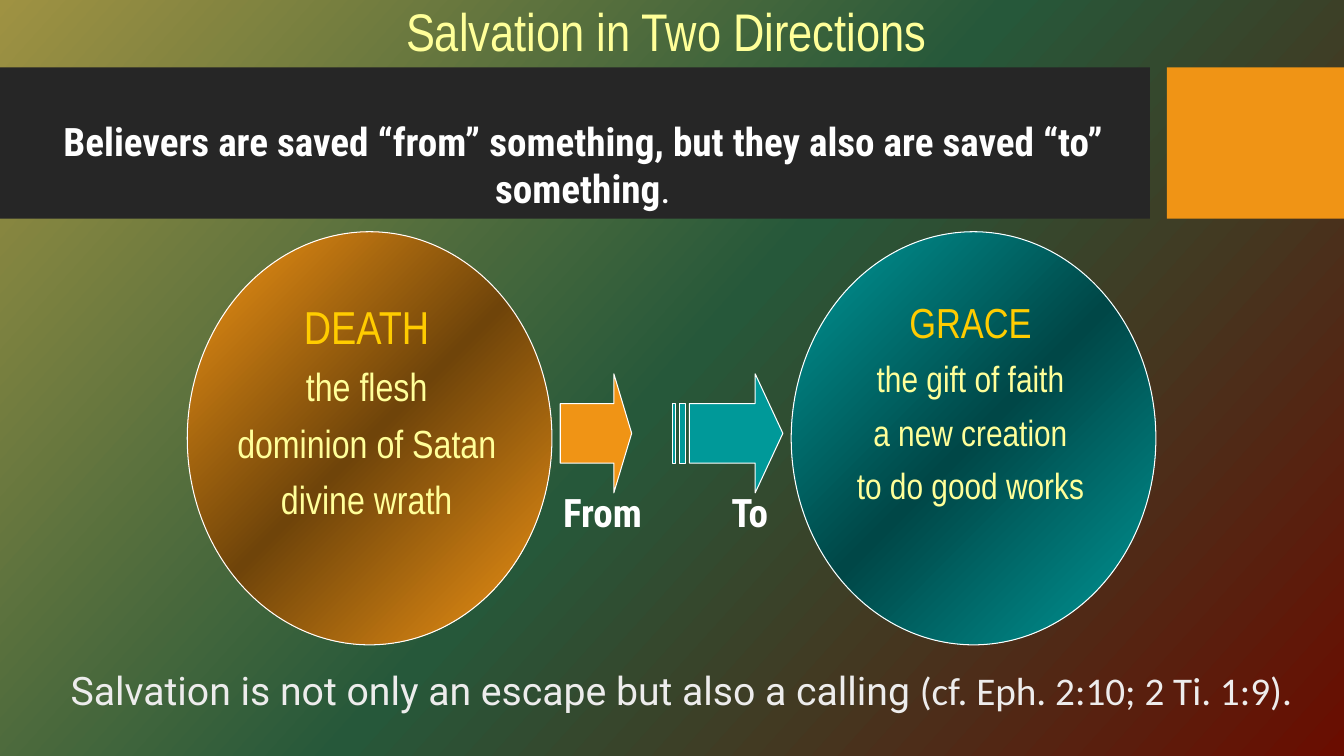
from copy import deepcopy

from pptx import Presentation
from pptx.dml.color import RGBColor
from pptx.enum.shapes import MSO_SHAPE
from pptx.enum.text import MSO_ANCHOR, PP_ALIGN
from pptx.oxml import parse_xml
from pptx.oxml.ns import nsdecls, qn
from pptx.util import Cm, Pt

RECTANGLE, ELLIPSE = MSO_SHAPE.RECTANGLE, MSO_SHAPE.OVAL
ARROW, STRIPED_ARROW = MSO_SHAPE.RIGHT_ARROW, MSO_SHAPE.STRIPED_RIGHT_ARROW
LEFT, CENTER = PP_ALIGN.LEFT, PP_ALIGN.CENTER
MIDDLE = MSO_ANCHOR.MIDDLE

OLIVE = RGBColor(0x9F, 0x92, 0x42)
GREEN = RGBColor(0x26, 0x58, 0x3A)
MAROON = RGBColor(0x6A, 0x0D, 0x00)
CHARCOAL = RGBColor(0x26, 0x26, 0x26)
ORANGE = RGBColor(0xF0, 0x94, 0x15)
BROWN = RGBColor(0x6F, 0x44, 0x0A)
TEAL = RGBColor(0x00, 0x99, 0x99)
DARK_TEAL = RGBColor(0x00, 0x47, 0x47)
WHITE = RGBColor(0xFF, 0xFF, 0xFF)
PALE_GRAY = RGBColor(0xED, 0xEC, 0xEC)
PALE_YELLOW = RGBColor(0xFF, 0xFF, 0x99)
GOLD = RGBColor(0xFF, 0xCC, 0x00)


def set_gradient(fill, element, angle, colors):
    fill.gradient()
    fill.gradient_angle = 360 - angle
    stop_list = element.find(".//" + qn("a:gsLst"))
    stop_list.insert(1, deepcopy(stop_list[0]))
    for stop, position, color in zip(fill.gradient_stops, (0, 0.5, 1), colors):
        stop.position = position
        stop.color.rgb = color


def add_text(left, top, width, height, lines, align=CENTER, spacing=None):
    box = slide.shapes.add_textbox(Cm(left), Cm(top), Cm(width), Cm(height))
    frame = box.text_frame
    frame.word_wrap = True
    for index, (text, font, size, color) in enumerate(lines):
        paragraph = frame.add_paragraph() if index else frame.paragraphs[0]
        paragraph.alignment = align
        paragraph.line_spacing = spacing
        if index:
            paragraph.space_before = Pt(10)
        paragraph.add_run().text = text
        if font:
            paragraph.font.name = font
        paragraph.font.size = Pt(size)
        paragraph.font.color.rgb = color
    return frame


prs = Presentation()
prs.slide_width, prs.slide_height = Cm(33.87), Cm(19.05)
slide = prs.slides.add_slide(prs.slide_layouts[6])
set_gradient(slide.background.fill, slide._element, 42, (OLIVE, GREEN, MAROON))

for left, width, color in ((0, 28.98, CHARCOAL), (29.41, 4.46, ORANGE)):
    band = slide.shapes.add_shape(RECTANGLE, Cm(left), Cm(1.7), Cm(width), Cm(3.81))
    band.shadow.inherit = False
    band.fill.solid()
    band.fill.fore_color.rgb = color
    band.line.fill.background()

title = add_text(5.51, 0.13, 22.56, 1.45,
                 [("Salvation in Two Directions", "Arial Narrow", 37.8, PALE_YELLOW)],
                 spacing=0.9)
title.vertical_anchor = MIDDLE

for left, edge, center in ((4.72, ORANGE, BROWN), (19.94, TEAL, DARK_TEAL)):
    realm = slide.shapes.add_shape(ELLIPSE, Cm(left), Cm(5.84), Cm(9.19), Cm(10.41))
    realm.shadow.inherit = False
    set_gradient(realm.fill, realm._element, 45, (edge, center, edge))
    realm.line.color.rgb = WHITE
    realm.line.width = Pt(0.75)

realms = (
    (20.14, 7.49, 8.64, 30, 26, "GRACE",
     ("the gift of faith", "a new creation", "to do good works")),
    (4.72, 7.54, 9.04, 33, 28, "DEATH",
     ("the flesh", "dominion of Satan", "divine wrath")),
)
for left, top, width, heading_size, item_size, heading, items in realms:
    lines = [(heading, "Arial Narrow", heading_size, GOLD)]
    lines += [(item, "Arial Narrow", item_size, PALE_YELLOW) for item in items]
    add_text(left, top, width, 7.75, lines, spacing=0.9)

statement = add_text(
    0.81, 2.84, 27.76, 2.62,
    [("Believers are saved “from” something, but they also are saved “to” something",
      "Roboto Condensed", 28, WHITE)]).paragraphs[0]
statement.runs[0].font.bold = True
statement.add_run().text = "."

for preset, left, width, color in ((ARROW, 14.12, 1.8, ORANGE),
                                   (STRIPED_ARROW, 16.94, 2.79, TEAL)):
    arrow = slide.shapes.add_shape(preset, Cm(left), Cm(9.42), Cm(width), Cm(3))
    arrow.shadow.inherit = False
    arrow.adjustments[0] = 0.5
    arrow.adjustments[1] = 0.25
    arrow.fill.solid()
    arrow.fill.fore_color.rgb = color
    arrow.line.color.rgb = WHITE
    arrow.line.width = Pt(0.75)

directions = add_text(13.94, 12.19, 5.79, 1.45,
                      [("From\tTo", "Roboto Condensed", 28, WHITE)], LEFT).paragraphs[0]
directions.font.bold = True
tabs = parse_xml(f'<a:tabLst {nsdecls("a")}><a:tab pos="{Cm(4.24)}" algn="l"/></a:tabLst>')
directions._p.pPr.find(qn("a:defRPr")).addprevious(tabs)

calling = add_text(0.48, 16.66, 33.38, 1.45,
                   [("Salvation is not only an escape but also a calling ",
                     None, 28, PALE_GRAY)]).paragraphs[0]
calling.runs[0].font.name = "Roboto"
reference = calling.add_run()
reference.text = "(cf. Eph. 2:10; 2 Ti. 1:9)."
reference.font.name = "Calibri"

prs.save("out.pptx")
